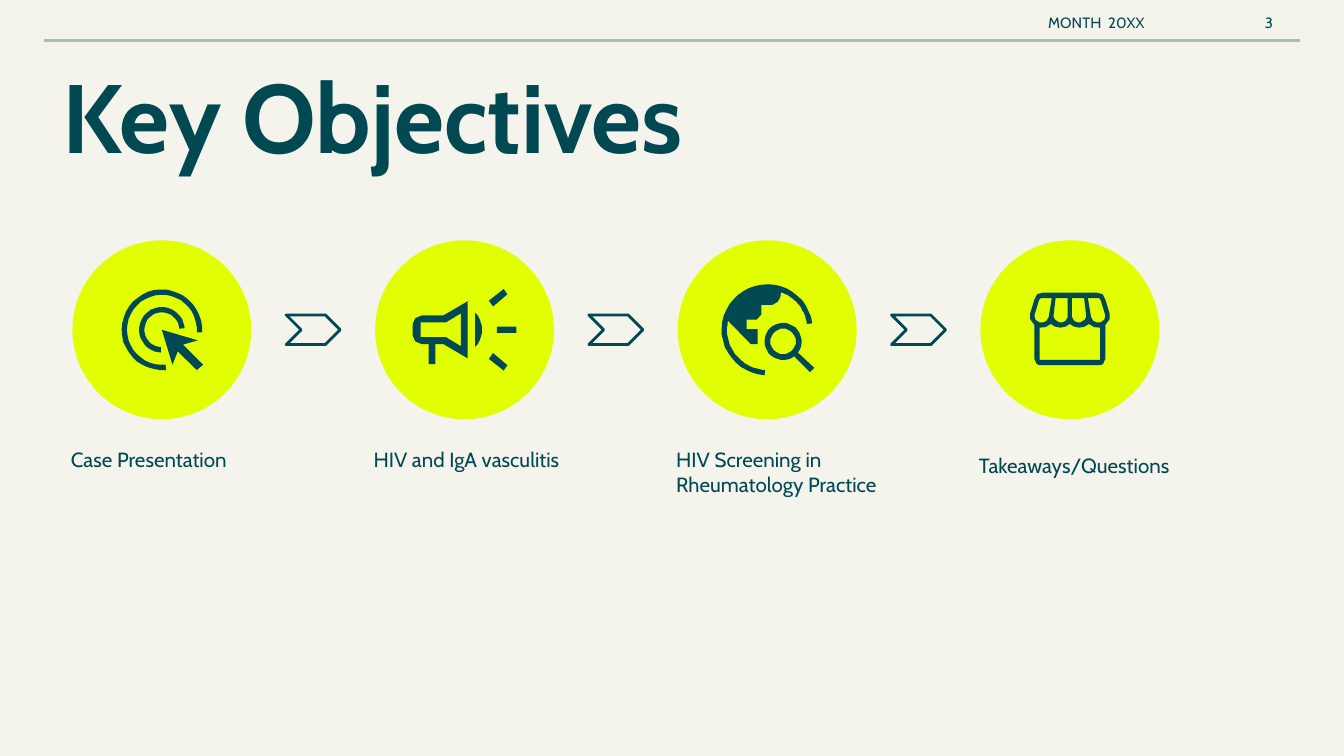
from dataclasses import dataclass
from math import cos, radians, sin

from lxml.etree import SubElement
from pptx import Presentation
from pptx.dml.color import RGBColor
from pptx.enum.shapes import MSO_CONNECTOR, MSO_SHAPE
from pptx.enum.text import MSO_ANCHOR, MSO_AUTO_SIZE, PP_ALIGN
from pptx.oxml.ns import qn
from pptx.util import Cm, Pt


@dataclass(frozen=True)
class Theme:
    font: str = "Cabin"
    paper: RGBColor = RGBColor.from_string("F4F3EC")
    ink: RGBColor = RGBColor.from_string("004852")
    rule: RGBColor = RGBColor.from_string("AAC1A9")
    accent: RGBColor = RGBColor.from_string("E1FF00")
    title: Pt = Pt(52)
    body: Pt = Pt(11)
    small: Pt = Pt(8)
    stroke: Pt = Pt(1.5)


def arc(cx, cy, r, start, end, steps=32):
    angles = [radians(start + (end - start) * i / steps) for i in range(steps + 1)]
    return [(cx + r * cos(a), cy + r * sin(a)) for a in angles]


def ring(outer, inner, start, end):
    return arc(0, 0, outer, start, end) + arc(0, 0, inner, end, start)


def flip_x(points):
    return [(-x, y) for x, y in reversed(points)]


def flip_y(points):
    return [(x, -y) for x, y in reversed(points)]


def target_icon():
    pointer = [(0, 0), (20, 66), (30, 41), (66, 76), (78, 66), (40, 28), (68, 20)]
    return [ring(76, 66, 84, 364), ring(43, 33, 93, 356), pointer]


def megaphone_icon():
    body = [(-98, 0), (-98, -11), (-93, -22), (-81, -27), (-40, -27), (6, -54)]
    handle = [(-55, 27), (-55, 65), (-68, 65), (-68, 27)]
    lower = flip_y(body)
    outline = body + lower[:2] + handle + lower[2:]
    hollow = [(-83, -14), (-35, -14), (-7, -31)]
    ray = [(74, -77), (46, -55), (54, -44), (81, -67)]
    bar = [(61, -6), (98, -6), (98, 6), (61, 6)]
    wave = arc(-14, 0, 47, -43, 43)
    return [outline, hollow + flip_y(hollow), wave, ray, bar, flip_y(ray)]


def globe_icon():
    land = [(25, -62), (20, -53), (10, -47), (-11, -47), (-11, -29), (-20, -19),
            (-39, -19), (-39, -1), (-18, -1), (-18, 27), (-31, 27)]
    globe = (arc(0, 0, 86, 93, 352) + arc(0, 0, 76, 352, 290)
             + land + arc(0, 0, 76, 193, 93))
    magnifier = arc(30, 22, 35, 54, 396) + [(89, 72), (81, 80)]
    return [globe, magnifier, arc(30, 22, 24, 0, 360)]


def shop_icon():
    frame = [(-52, -70), (-62, -67), (-67, -57), (-75, -31), (-75, -20), (-67, -9),
             (-67, 55), (-63, 64), (-58, 67)]
    wall = [(0, -11), (-8, -6), (-18, -4), (-28, -6), (-36, -11), (-46, -5),
            (-57, -4), (-57, 57)]
    outer_stripe = [(-34, -60), (-40, -24), (-44, -17), (-50, -14), (-58, -14),
                    (-65, -19), (-67, -27), (-58, -57), (-55, -60)]
    inner_stripe = [(-4, -60), (-4, -24), (-8, -17), (-14, -14), (-20, -14),
                    (-28, -19), (-31, -25), (-27, -60)]
    stripes = [outer_stripe, inner_stripe]
    return [frame + flip_x(frame), wall + flip_x(wall),
            *stripes, *map(flip_x, stripes)]


class Deck:
    def __init__(self, theme):
        self.theme = theme
        self.prs = Presentation()
        self.prs.slide_width, self.prs.slide_height = Cm(25.4), Cm(14.28)
        self.s = self.prs.slides.add_slide(self.prs.slide_layouts[5])
        self.s.background.fill.solid()
        self.s.background.fill.fore_color.rgb = theme.paper

    def set_text(self, sp, text, size, bold=False, align=PP_ALIGN.LEFT, anchor=MSO_ANCHOR.TOP):
        tf = sp.text_frame
        tf.text = text
        tf.word_wrap = True
        tf.auto_size = MSO_AUTO_SIZE.NONE
        tf.vertical_anchor = anchor
        tf.margin_left = tf.margin_right = tf.margin_top = tf.margin_bottom = Cm(0.25)
        p = tf.paragraphs[0]
        p.alignment = align
        p.font.name, p.font.size, p.font.bold = self.theme.font, size, bold
        p.font.color.rgb = self.theme.ink

    def title(self, text, x, y, w, h):
        sp = self.s.shapes.title
        sp.left, sp.top, sp.width, sp.height = Cm(x), Cm(y), Cm(w), Cm(h)
        self.set_text(sp, text, self.theme.title, bold=True)

    def text(self, text, x, y, w, h, size, **style):
        sp = self.s.shapes.add_textbox(Cm(x), Cm(y), Cm(w), Cm(h))
        self.set_text(sp, text, size, **style)

    def rule(self, x1, x2, y):
        line = self.s.shapes.add_connector(MSO_CONNECTOR.STRAIGHT, Cm(x1), Cm(y), Cm(x2), Cm(y))
        line.line.color.rgb = self.theme.rule
        line.line.width = self.theme.stroke
        SubElement(line._element.spPr, qn("a:effectLst"))

    def fill(self, sp, color):
        sp.shadow.inherit = False
        sp.fill.solid()
        sp.fill.fore_color.rgb = color
        sp.line.fill.background()

    def circle(self, cx, cy, d):
        sp = self.s.shapes.add_shape(
            MSO_SHAPE.OVAL, Cm(cx - d / 2), Cm(cy - d / 2), Cm(d), Cm(d))
        self.fill(sp, self.theme.accent)

    def chevron(self, cx, cy, w, h):
        sp = self.s.shapes.add_shape(
            MSO_SHAPE.CHEVRON, Cm(cx - w / 2), Cm(cy - h / 2), Cm(w), Cm(h))
        sp.shadow.inherit = False
        sp.fill.background()
        sp.line.color.rgb = self.theme.ink
        sp.line.width = self.theme.stroke

    def icon(self, contours, cx, cy):
        first, *others = contours
        fb = self.s.shapes.build_freeform(*first[0], scale=Cm(0.01))
        fb.add_line_segments(first[1:])
        for points in others:
            fb.move_to(*points[0])
            fb.add_line_segments(points[1:])
        self.fill(fb.convert_to_shape(Cm(cx), Cm(cy)), self.theme.ink)


def main():
    theme = Theme()
    deck = Deck(theme)
    deck.rule(0.84, 24.56, 0.76)
    deck.title("Key Objectives", 0.94, 0.81, 21.51, 2.95)
    deck.text("MONTH  20XX", 19.56, 0, 3.38, 0.86, theme.small)
    deck.text("3", 21.92, 0.05, 2.39, 0.76, theme.small,
              align=PP_ALIGN.RIGHT, anchor=MSO_ANCHOR.MIDDLE)

    objectives = [
        ("Case Presentation", target_icon, 8.2),
        ("HIV and IgA vasculitis", megaphone_icon, 8.2),
        ("HIV Screening in Rheumatology Practice", globe_icon, 8.2),
        ("Takeaways/Questions", shop_icon, 8.3),
    ]
    first_cx, cy, pitch = 3.06, 6.23, 5.72
    for i, (caption, icon, top) in enumerate(objectives):
        cx = first_cx + i * pitch
        if i:
            deck.chevron(cx - pitch / 2, cy, 1.02, 0.56)
        deck.circle(cx, cy, 3.38)
        deck.icon(icon(), cx, cy)
        deck.text(caption, cx - 1.97, top, 5.33, 0.86, theme.body)

    deck.prs.save("out.pptx")


if __name__ == "__main__":
    main()
